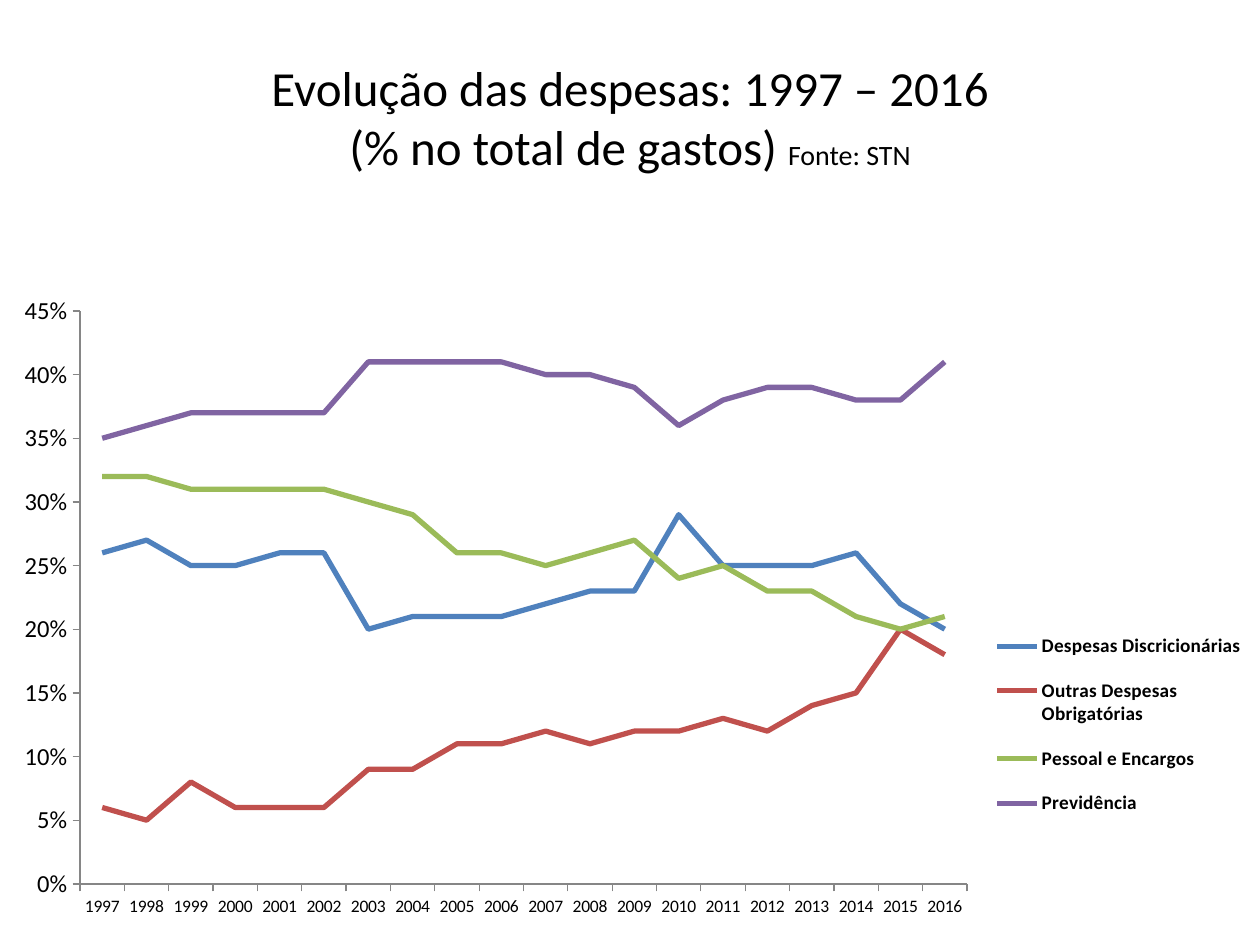
from dataclasses import dataclass

from lxml import etree
from pptx import Presentation
from pptx.chart.data import CategoryChartData
from pptx.dml.color import RGBColor
from pptx.enum.chart import XL_CHART_TYPE, XL_LEGEND_POSITION, XL_TICK_MARK
from pptx.enum.text import MSO_ANCHOR, PP_ALIGN
from pptx.oxml.ns import qn
from pptx.util import Emu, Pt

PX_PER_INCH = 126
FONT = "Calibri"
BLACK, AXIS_GRAY = "000000", "868686"
YEARS = range(1997, 2017)


@dataclass(frozen=True)
class Box:
    left: int
    top: int
    width: int
    height: int


@dataclass(frozen=True)
class Expense:
    name: str
    color: str
    percents: tuple


SLIDE = Box(0, 0, 1260, 945)
TITLE = Box(63, 38, 1134, 157)
CHART = Box(0, 284, 1260, 645)
PLOT = Box(80, 311, 887, 573)
LEGEND = Box(984, 614, 270, 222)

EXPENSES = (
    Expense("Despesas Discricionárias", "4F81BD",
            (26, 27, 25, 25, 26, 26, 20, 21, 21, 21, 22, 23, 23, 29, 25, 25, 25, 26, 22, 20)),
    Expense("Outras Despesas Obrigatórias", "C0504D",
            (6, 5, 8, 6, 6, 6, 9, 9, 11, 11, 12, 11, 12, 12, 13, 12, 14, 15, 20, 18)),
    Expense("Pessoal e Encargos", "9BBB59",
            (32, 32, 31, 31, 31, 31, 30, 29, 26, 26, 25, 26, 27, 24, 25, 23, 23, 21, 20, 21)),
    Expense("Previdência", "8064A2",
            (35, 36, 37, 37, 37, 37, 41, 41, 41, 41, 40, 40, 39, 36, 38, 39, 39, 38, 38, 41)),
)


def px(length: int) -> Emu:
    return Emu(round(length * 914400 / PX_PER_INCH))


def rgb(value: str) -> RGBColor:
    return RGBColor.from_string(value)


def set_all(target, values: dict) -> None:
    for name, value in values.items():
        setattr(target, name, value)


def box_values(box: Box) -> dict:
    return {name: px(getattr(box, name)) for name in ("left", "top", "width", "height")}


def set_font(font, size: int, bold: bool = False) -> None:
    set_all(font, {"name": FONT, "size": Pt(size), "bold": bold})
    font.color.rgb = rgb(BLACK)


def place_in_chart(element, box: Box, inner: bool = False) -> None:
    """Give a plot area or legend a fixed place, as fractions of the chart."""
    for old in element.findall(qn("c:layout")):
        element.remove(old)
    layout = etree.Element(qn("c:layout"))
    manual = etree.SubElement(layout, qn("c:manualLayout"))
    entries = {"layoutTarget": "inner"} if inner else {}
    entries |= {
        "xMode": "edge",
        "yMode": "edge",
        "x": round((box.left - CHART.left) / CHART.width, 4),
        "y": round((box.top - CHART.top) / CHART.height, 4),
        "w": round(box.width / CHART.width, 4),
        "h": round(box.height / CHART.height, 4),
    }
    for tag, value in entries.items():
        etree.SubElement(manual, qn(f"c:{tag}")).set("val", str(value))
    position = element.find(qn("c:legendPos"))
    if position is None:
        element.insert(0, layout)
    else:
        position.addnext(layout)


def write_title(title) -> None:
    set_all(title, box_values(TITLE))
    frame = title.text_frame
    set_all(frame, {"vertical_anchor": MSO_ANCHOR.MIDDLE, "word_wrap": True})
    heading = frame.paragraphs[0]
    heading.alignment = PP_ALIGN.CENTER
    for text, size, breaks in (
        ("Evolução das despesas: 1997 – 2016", 28, True),
        ("(% no total de gastos) ", 28, False),
        ("Fonte: STN", 16, False),
    ):
        part = heading.add_run()
        part.text = text
        set_font(part.font, size)
        if breaks:
            heading.add_line_break()


def format_axis(axis, size: int) -> None:
    set_all(axis, {
        "has_major_gridlines": False,
        "major_tick_mark": XL_TICK_MARK.OUTSIDE,
        "minor_tick_mark": XL_TICK_MARK.NONE,
    })
    set_font(axis.tick_labels.font, size)
    axis.format.line.color.rgb = rgb(AXIS_GRAY)
    axis.format.line.width = Pt(0.75)


def add_expense_chart(slide) -> None:
    data = CategoryChartData(number_format="0%")
    data.categories = [str(year) for year in YEARS]
    for expense in EXPENSES:
        data.add_series(expense.name, [percent / 100 for percent in expense.percents])
    chart = slide.shapes.add_chart(
        XL_CHART_TYPE.LINE, *box_values(CHART).values(), data).chart
    set_all(chart, {"has_title": False, "has_legend": True})
    set_font(chart.font, 10)

    # Axes
    format_axis(chart.category_axis, 10)
    shares = chart.value_axis
    format_axis(shares, 14)
    set_all(shares, {"minimum_scale": 0, "maximum_scale": 0.45, "major_unit": 0.05})
    set_all(shares.tick_labels, {"number_format": "0%", "number_format_is_linked": False})

    # Expense lines
    plot = chart.plots[0]
    plot.vary_by_categories = False
    for line, expense in zip(plot.series, EXPENSES):
        line.smooth = False
        line.format.line.color.rgb = rgb(expense.color)
        line.format.line.width = Pt(3)

    # Legend and plot positions
    legend = chart.legend
    set_all(legend, {"position": XL_LEGEND_POSITION.RIGHT, "include_in_layout": False})
    set_font(legend.font, 11, bold=True)
    chart_root = chart.element
    place_in_chart(chart_root.find(f".//{qn('c:plotArea')}"), PLOT, inner=True)
    place_in_chart(chart_root.find(f".//{qn('c:legend')}"), LEGEND)


def main() -> None:
    deck = Presentation()
    set_all(deck, {"slide_width": px(SLIDE.width), "slide_height": px(SLIDE.height)})
    slide = deck.slides.add_slide(deck.slide_layouts[5])
    write_title(slide.shapes.title)
    add_expense_chart(slide)
    deck.save("out.pptx")


if __name__ == "__main__":
    main()
